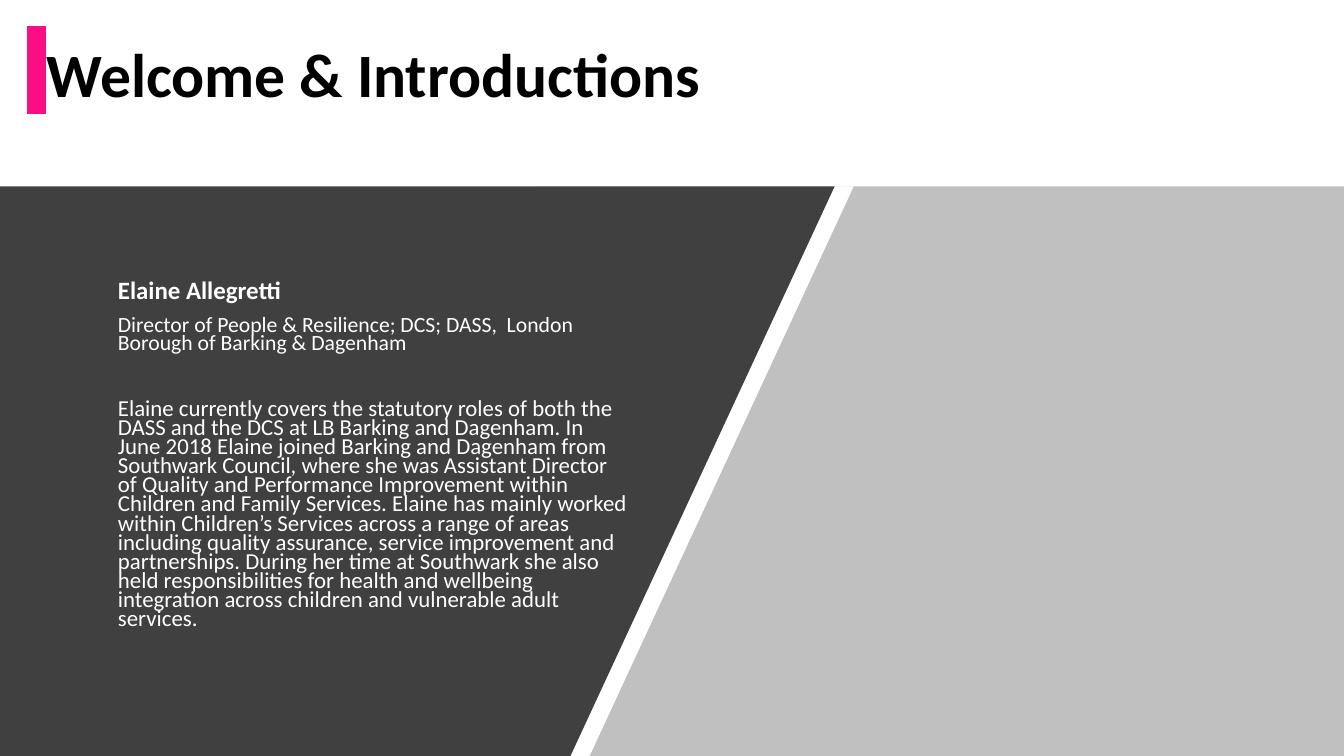
from dataclasses import dataclass

from lxml import etree
from pptx import Presentation
from pptx.dml.color import RGBColor
from pptx.enum.shapes import MSO_SHAPE
from pptx.enum.text import MSO_ANCHOR, MSO_AUTO_SIZE, PP_ALIGN
from pptx.oxml.ns import qn
from pptx.util import Inches, Pt

PROCESS = MSO_SHAPE.FLOWCHART_PROCESS
TOP, MIDDLE = MSO_ANCHOR.TOP, MSO_ANCHOR.MIDDLE
NO_AUTOFIT = MSO_AUTO_SIZE.NONE
LEFT = PP_ALIGN.LEFT
FONT = "Calibri"
COLOURS = {
    "title": "000000",
    "biography": "FFFFFF",
    "dark panel": "404040",
    "light panel": "A6A6A6",
    "accent": "FA0E84",
}

presentation = Presentation()
presentation.slide_width = Inches(13.33)
presentation.slide_height = Inches(7.5)
COLUMN = presentation.slide_width / 100
ROW = presentation.slide_height / 100
PANEL_TOP = 24.67


@dataclass(frozen=True)
class Area:
    column: float
    row: float
    columns: float
    rows: float


@dataclass(frozen=True)
class Panel:
    colour: str
    opacity: int
    corners: tuple[tuple[float, float], ...]


@dataclass(frozen=True)
class TextStyle:
    text: str
    size: float
    colour: str
    bold: bool = False
    line_spacing: float = 0.7
    space_before: float = 0
    space_after: float = 0


TITLE_AREA = Area(2.7, 0.53, 86.25, 19.33)
BIOGRAPHY_AREA = Area(6.9, 29.33, 41.78, 59.33)
ACCENT_AREA = Area(2.03, 3.47, 1.43, 11.6)

PANELS = (
    Panel("light panel", 70, (
        (40, PANEL_TOP), (100, PANEL_TOP), (100, 100),
        (43.88, 100), (63.53, PANEL_TOP),
    )),
    Panel("dark panel", 100, (
        (0, PANEL_TOP), (62.1, PANEL_TOP), (42.45, 100), (0, 100),
    )),
)

TITLE = TextStyle("Welcome & Introductions", 44, "title", True, 0.9, space_after=6)
BIOGRAPHY = (
    TextStyle("Elaine Allegretti", 17.8, "biography", True),
    TextStyle(
        "Director of People & Resilience; DCS; DASS,  London Borough of "
        "Barking & Dagenham",
        15.5, "biography", space_before=10,
    ),
    TextStyle(
        "Elaine currently covers the statutory roles of both the DASS and the DCS "
        "at LB Barking and Dagenham. In June 2018 Elaine joined Barking and "
        "Dagenham from Southwark Council, where she was Assistant Director of "
        "Quality and Performance Improvement within Children and Family Services. "
        "Elaine has mainly worked within Children’s Services across a range of "
        "areas including quality assurance, service improvement and partnerships. "
        "During her time at Southwark she also held responsibilities for health "
        "and wellbeing integration across children and vulnerable adult services.",
        16.3, "biography", space_before=33,
    ),
)


def colour_of(name: str) -> RGBColor:
    return RGBColor.from_string(COLOURS[name])


def bounds(area: Area) -> tuple[int, int, int, int]:
    return (
        round(area.column * COLUMN), round(area.row * ROW),
        round(area.columns * COLUMN), round(area.rows * ROW),
    )


def paint(shape, colour: str, opacity: int = 100) -> None:
    shape.shadow.inherit = False
    shape.line.fill.background()
    shape.fill.solid()
    shape.fill.fore_color.rgb = colour_of(colour)
    if opacity < 100:
        fill_colour = shape._element.spPr.find(qn("a:solidFill"))[0]
        etree.SubElement(fill_colour, qn("a:alpha"), val=str(opacity * 1000))


def draw_panel(slide, panel: Panel) -> None:
    points = [(round(x * COLUMN), round(y * ROW)) for x, y in panel.corners]
    builder = slide.shapes.build_freeform(*points[0])
    builder.add_line_segments(points[1:], close=True)
    paint(builder.convert_to_shape(), panel.colour, panel.opacity)


def write_paragraph(paragraph, style: TextStyle) -> None:
    paragraph.text = style.text
    paragraph.alignment = LEFT
    paragraph.line_spacing = style.line_spacing
    paragraph.space_before = Pt(style.space_before)
    paragraph.space_after = Pt(style.space_after)
    properties = paragraph._p.get_or_add_pPr()
    properties.set("marL", "0")
    properties.set("indent", "0")
    etree.SubElement(properties, qn("a:buNone"))
    font = paragraph.runs[0].font
    font.name = FONT
    font.size = Pt(style.size)
    font.bold = style.bold
    font.color.rgb = colour_of(style.colour)


def fill_placeholder(slide, placeholder, area: Area, styles: tuple[TextStyle, ...],
                     anchor, side_margin: float, top_margin: float) -> None:
    (placeholder.left, placeholder.top,
     placeholder.width, placeholder.height) = bounds(area)
    text_frame = placeholder.text_frame
    text_frame.word_wrap = True
    text_frame.auto_size = NO_AUTOFIT
    text_frame.vertical_anchor = anchor
    text_frame.margin_left = text_frame.margin_right = Inches(side_margin)
    text_frame.margin_top = Inches(top_margin)
    for index, style in enumerate(styles):
        paragraph = text_frame.add_paragraph() if index else text_frame.paragraphs[0]
        write_paragraph(paragraph, style)
    slide.shapes._spTree.append(placeholder._element)


def main() -> None:
    slide = presentation.slides.add_slide(presentation.slide_layouts[1])
    title, biography = slide.placeholders
    for panel in PANELS:
        draw_panel(slide, panel)
    fill_placeholder(slide, title, TITLE_AREA, (TITLE,), MIDDLE, 0.1, 0.05)
    fill_placeholder(slide, biography, BIOGRAPHY_AREA, BIOGRAPHY, TOP, 0.25, 0.61)
    accent = slide.shapes.add_shape(PROCESS, *bounds(ACCENT_AREA))
    paint(accent, "accent")
    presentation.save("out.pptx")


if __name__ == "__main__":
    main()
